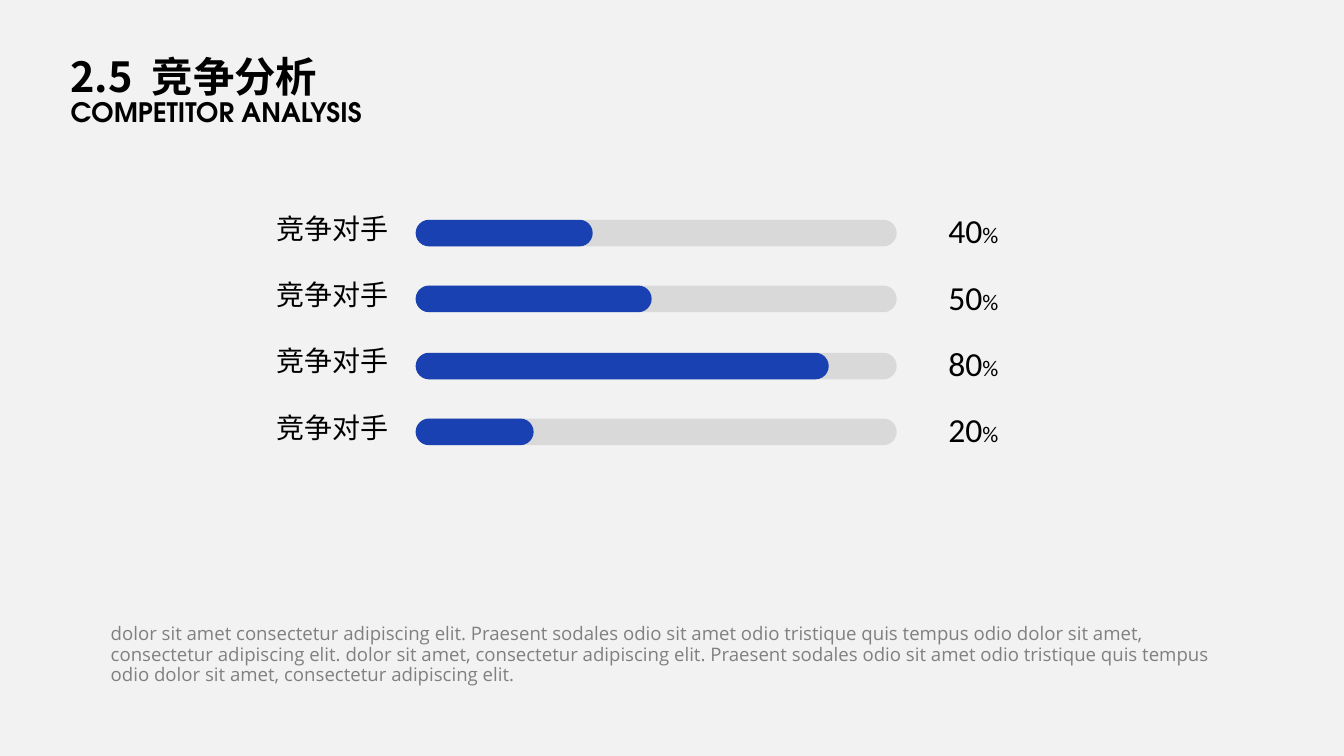
from pptx import Presentation
from pptx.util import Pt
from pptx.dml.color import RGBColor
from pptx.enum.shapes import MSO_SHAPE
from pptx.enum.text import MSO_ANCHOR, PP_ALIGN
from lxml.etree import SubElement
from pptx.oxml.ns import qn

THEME = {
    "bg": "F2F2F2", "ink": "000000", "body": "808080",
    "track": "D9D9D9", "bar": "1941B1",
    "title": ("Noto Sans CJK SC", 29.6), "subtitle": ("TeX Gyre Adventor", 19.1),
    "label": ("Noto Sans CJK SC", 20), "value": ("Calibri", 24),
    "unit": ("Calibri", 16), "caption": ("Open Sans", 13.3),
}


def add_box(left, top, width, height, insets, anchor=MSO_ANCHOR.TOP, wrap=True):
    tf = s.shapes.add_textbox(Pt(left), Pt(top), Pt(width), Pt(height)).text_frame
    tf.word_wrap = wrap
    tf.vertical_anchor = anchor
    tf.margin_left, tf.margin_top, tf.margin_right, tf.margin_bottom = map(Pt, insets)
    return tf


def add_run(p, text, style, color="ink", bold=False):
    r = p.add_run()
    r.text = text
    name, size = THEME[style]
    r.font.name, r.font.size, r.font.bold = name, Pt(size), bold
    r.font.color.rgb = RGBColor.from_string(THEME[color])
    SubElement(r.font._element, qn("a:ea")).set("typeface", name)
    return r


prs = Presentation()
prs.slide_width, prs.slide_height = Pt(960), Pt(540)
s = prs.slides.add_slide(prs.slide_layouts[6])
s.background.fill.solid()
s.background.fill.fore_color.rgb = RGBColor.from_string(THEME["bg"])

tf = add_box(50.4, 33.8, 211.7, 61.2, (0, 0, 0, 3.6), wrap=False)
p = tf.paragraphs[0]
p.line_spacing = Pt(38.1)
add_run(p, "2.5", "title", bold=True)
gap = add_run(p, " ", "title", bold=True)
gap.font._element.set("spc", "660")
add_run(p, "竞争分析", "title", bold=True)
p = tf.add_paragraph()
p.line_spacing = Pt(19.1)
add_run(p, "COMPETITOR ANALYSIS", "subtitle", bold=True)

ROW_PITCH, BAR_UNIT = 47.3, 42.15
rows = [("40", 3, 157), ("50", 4, 204), ("80", 7, 252), ("20", 2, 299)]
for i, (value, units, bar_top) in enumerate(rows):
    for width, color in ((343.6, "track"), (units * BAR_UNIT, "bar")):
        sp = s.shapes.add_shape(MSO_SHAPE.ROUNDED_RECTANGLE,
                                Pt(296.9), Pt(bar_top), Pt(width), Pt(19))
        sp.adjustments[0] = 0.5
        sp.shadow.inherit = False
        sp.fill.solid()
        sp.fill.fore_color.rgb = RGBColor.from_string(THEME[color])
        sp.line.fill.background()

    tf = add_box(179.3, 146.8 + i * ROW_PITCH, 105.1, 32.4,
                 (7.2, 3.6, 7.2, 3.6), MSO_ANCHOR.MIDDLE)
    p = tf.paragraphs[0]
    p.alignment = PP_ALIGN.RIGHT
    add_run(p, "竞争对手", "label")

    tf = add_box(677.4, 149.2 + i * ROW_PITCH, 63.4, 31, (0, 0, 0, 0), MSO_ANCHOR.MIDDLE)
    p = tf.paragraphs[0]
    add_run(p, value, "value")
    add_run(p, "%", "unit")

tf = add_box(72, 442.8, 815.8, 55.4, (7.2, 3.6, 7.2, 3.6))
p = tf.paragraphs[0]
p.line_spacing = 0.9
add_run(p, "dolor sit amet consectetur adipiscing elit. Praesent sodales odio sit amet "
           "odio tristique quis tempus odio dolor sit amet, consectetur adipiscing elit. "
           "dolor sit amet, consectetur adipiscing elit. Praesent sodales odio sit amet "
           "odio tristique quis tempus odio dolor sit amet, consectetur adipiscing elit.",
        "caption", "body")

prs.save("out.pptx")
